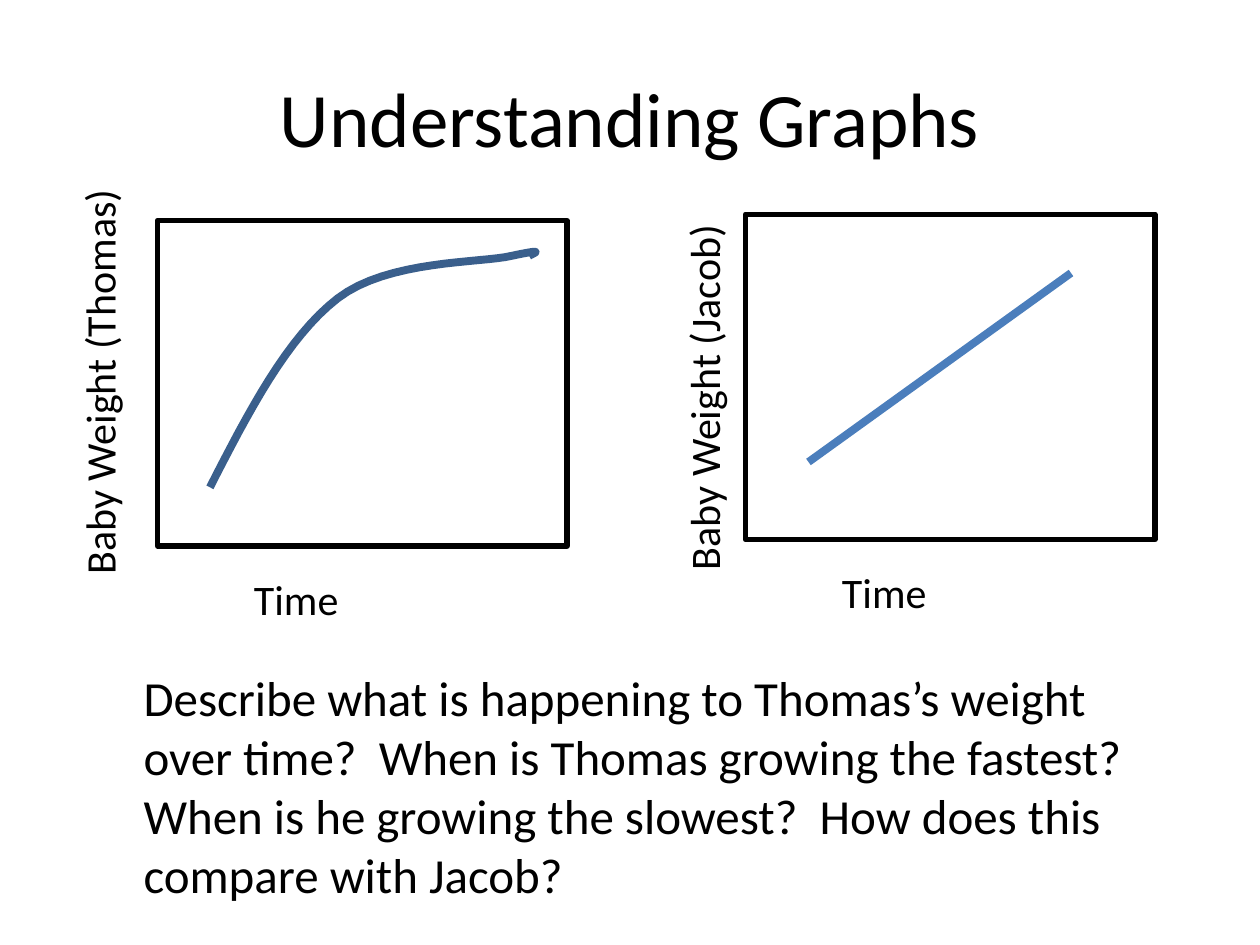
import pptx
import pptx.dml.color
import pptx.enum.shapes
import pptx.enum.text
import pptx.oxml.ns
import pptx.util
import lxml.etree

Pt = pptx.util.Pt
COLORS = {"ink": "000000", "curve": "3A5F8C", "line": "4B7EBC"}
FONT = "Calibri"
PLOT_WIDTH, PLOT_HEIGHT = 234, 186
LABEL_HEIGHT = 36
ALIGN = pptx.enum.text.PP_ALIGN
ANCHOR = pptx.enum.text.MSO_ANCHOR


def format_text(frame, text, size=24, align=ALIGN.LEFT, anchor=ANCHOR.TOP):
    frame.word_wrap = True
    frame.vertical_anchor = anchor
    paragraph = frame.paragraphs[0]
    paragraph.alignment = align
    run = paragraph.add_run()
    run.text = text
    run.font.name = FONT
    run.font.size = Pt(size)
    run.font.color.rgb = pptx.dml.color.RGBColor.from_string(COLORS["ink"])


def bezier_points(start, segments, steps=16):
    """Return points along joined cubic curves, each (control, control, end)."""
    points = [start]
    for first, second, end in segments:
        for step in range(1, steps + 1):
            t = step / steps
            u = 1 - t
            points.append(tuple(
                u**3 * a + 3 * u * u * t * b + 3 * u * t * t * c + t**3 * d
                for a, b, c, d in zip(start, first, second, end)))
        start = end
    return points


class SlideBuilder:
    def __init__(self, slide):
        self.slide = slide
        self.shapes = slide.shapes

    def style_line(self, line, color, width):
        line.color.rgb = pptx.dml.color.RGBColor.from_string(COLORS[color])
        line.width = Pt(width)

    def text(self, left, top, width, height, text, rotation=0, **text_format):
        box = self.shapes.add_textbox(Pt(left), Pt(top), Pt(width), Pt(height))
        box.rotation = rotation
        format_text(box.text_frame, text, **text_format)

    def frame(self, left, top, width, height):
        shape = self.shapes.add_shape(
            pptx.enum.shapes.MSO_SHAPE.RECTANGLE,
            Pt(left), Pt(top), Pt(width), Pt(height))
        shape.shadow.inherit = False
        shape.fill.background()
        self.style_line(shape.line, "ink", 3)

    def line(self, start, end, color):
        connector = self.shapes.add_connector(
            pptx.enum.shapes.MSO_CONNECTOR.STRAIGHT,
            *(Pt(value) for value in start + end))
        self.style_line(connector.line, color, 4.5)
        lxml.etree.SubElement(
            connector._element.spPr, pptx.oxml.ns.qn("a:effectLst"))

    def curve(self, start, segments, color):
        points = [(Pt(x), Pt(y)) for x, y in bezier_points(start, segments)]
        builder = self.shapes.build_freeform(*points[0])
        builder.add_line_segments(points[1:], close=False)
        shape = builder.convert_to_shape()
        shape.shadow.inherit = False
        shape.fill.background()
        self.style_line(shape.line, color, 4.5)

    def graph(self, left, top, name, label_center, label_length):
        """Draw an empty graph with its two axis labels."""
        self.frame(left, top, PLOT_WIDTH, PLOT_HEIGHT)
        center_x, center_y = label_center
        self.text(center_x - label_length / 2, center_y - LABEL_HEIGHT / 2,
                  label_length, LABEL_HEIGHT, f"Baby Weight ({name})",
                  rotation=270)
        self.text(left + 48, top + 198, 90, LABEL_HEIGHT, "Time")


def main():
    presentation = pptx.Presentation()
    presentation.slide_width, presentation.slide_height = Pt(720), Pt(540)
    builder = SlideBuilder(
        presentation.slides.add_slide(presentation.slide_layouts[6]))

    builder.text(36, 21.6, 648, 90, "Understanding Graphs", size=44,
                 align=ALIGN.CENTER, anchor=ANCHOR.MIDDLE)

    builder.graph(90, 126, "Thomas", (56.5, 214), 242.6)
    builder.curve((120, 278.5), [
        ((142, 235.5), (164, 193), (193, 170.5)),
        ((222, 148.3), (274.5, 150.5), (292.5, 146.2)),
        ((311, 142.3), (306.7, 144), (302.4, 146.2)),
    ], "curve")

    builder.graph(426, 122.4, "Jacob", (402, 223), 219.6)
    builder.line((462, 264), (612, 156), "line")

    builder.text(75, 378, 609, 143.3,
                 "Describe what is happening to Thomas’s weight over time?  "
                 "When is Thomas growing the fastest?  When is he growing the "
                 "slowest?  How does this compare with Jacob?", size=28)
    presentation.save("out.pptx")


if __name__ == "__main__":
    main()
